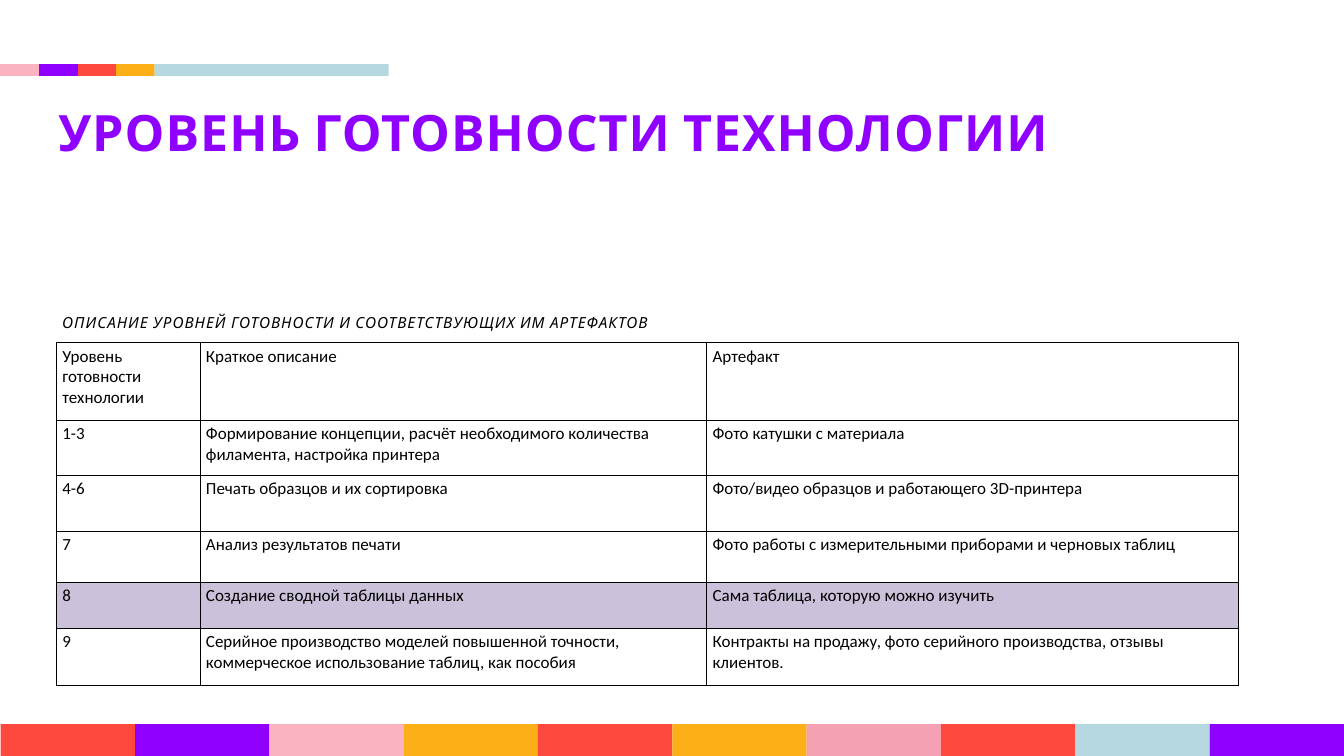
from dataclasses import dataclass

from lxml.etree import SubElement
from pptx import Presentation
from pptx.dml.color import RGBColor
from pptx.enum.shapes import MSO_SHAPE as Shape
from pptx.enum.text import MSO_ANCHOR as Anchor, MSO_AUTO_SIZE as AutoSize, PP_ALIGN as Align
from pptx.oxml.ns import qn
from pptx.util import Pt

PX = 9144  # EMU per px, 100 px to the inch
SLIDE_WIDTH, SLIDE_HEIGHT = 2199, 1237


@dataclass(frozen=True)
class Theme:
    pink: str = "FBB3C1"
    rose: str = "F4A1B3"
    violet: str = "8F00FF"
    red: str = "FD493D"
    amber: str = "FCAF17"
    blue: str = "B5D8E1"
    lilac: str = "CCC1DA"
    white: str = "FFFFFF"
    black: str = "000000"
    heading_font: str = "Cabin"
    table_font: str = "Calibri"
    title_size: int = 59
    caption_size: int = 18
    table_size: int = 20
    letter_spacing: int = 120  # hundredths of a point
    border_width: int = 1


THEME = Theme()

ACCENT_EDGES = [0, 64, 128, 190, 253, 636]
ACCENT_COLORS = [THEME.pink, THEME.violet, THEME.red, THEME.amber, THEME.blue]
FOOTER_COLORS = [THEME.red, THEME.violet, THEME.pink, THEME.amber, THEME.red,
                 THEME.amber, THEME.rose, THEME.red, THEME.blue, THEME.violet]

COLUMN_WIDTHS = [235, 829, 871]
ROW_HEIGHTS = [127, 90, 92, 83, 75, 94]
CURRENT_LEVEL = "8"
LEVELS = [
    ("Уровень готовности технологии", "Краткое описание", "Артефакт"),
    ("1-3", "Формирование концепции, расчёт необходимого количества филамента, настройка принтера",
     "Фото катушки с материала"),
    ("4-6", "Печать образцов и их сортировка", "Фото/видео образцов и работающего 3D-принтера"),
    ("7", "Анализ результатов печати", "Фото работы с измерительными приборами и черновых таблиц"),
    ("8", "Создание сводной таблицы данных", "Сама таблица, которую можно изучить"),
    ("9", "Серийное производство моделей повышенной точности, коммерческое использование таблиц, как пособия",
     "Контракты на продажу, фото серийного производства, отзывы клиентов."),
]


def px(*lengths):
    return [length * PX for length in lengths]


def set_attributes(target, values):
    for name, value in values.items():
        setattr(target, name, value)


def write_text(text_frame, text, color, spacing=None, **font_values):
    paragraph = text_frame.paragraphs[0]
    paragraph.alignment = Align.LEFT
    run = paragraph.add_run()
    run.text = text
    set_attributes(run.font, font_values)
    run.font.color.rgb = RGBColor.from_string(color)
    if spacing:
        run.font._element.set("spc", str(spacing))


def add_color_strip(slide, edges, colors, top, height):
    """Draw one filled block between each pair of neighbouring edges."""
    for left, right, color in zip(edges, edges[1:], colors):
        block = slide.shapes.add_shape(Shape.RECTANGLE, *px(left, top, right - left, height))
        block.shadow.inherit = False
        block.fill.solid()
        block.fill.fore_color.rgb = RGBColor.from_string(color)
        block.line.fill.background()


def add_title(slide, text):
    title = slide.shapes.title
    left, top, width, height = px(95, 164, 2054, 101)
    set_attributes(title, dict(left=left, top=top, width=width, height=height))
    set_attributes(title.text_frame, dict(
        margin_left=0, margin_top=2 * PX, margin_right=0, margin_bottom=0, word_wrap=True,
        vertical_anchor=Anchor.TOP, auto_size=AutoSize.SHAPE_TO_FIT_TEXT))
    write_text(title.text_frame, text, THEME.violet, THEME.letter_spacing,
               name=THEME.heading_font, size=Pt(THEME.title_size), bold=True)


def add_caption(slide, text):
    caption = slide.shapes.add_textbox(*px(92, 507, 1045, 40))
    set_attributes(caption.text_frame, dict(word_wrap=False, auto_size=AutoSize.SHAPE_TO_FIT_TEXT))
    write_text(caption.text_frame, text, THEME.black, THEME.letter_spacing,
               name=THEME.heading_font, size=Pt(THEME.caption_size), italic=True)


def add_cell_borders(cell):
    """Put the four border lines ahead of the cell fill, as the schema requires."""
    properties = cell._tc.get_or_add_tcPr()
    for index, side in enumerate(("a:lnL", "a:lnR", "a:lnT", "a:lnB")):
        line = SubElement(properties, qn(side), w=str(Pt(THEME.border_width)))
        SubElement(SubElement(line, qn("a:solidFill")), qn("a:srgbClr"), val=THEME.black)
        properties.insert(index, line)


def add_level_table(slide):
    frame = slide.shapes.add_table(len(LEVELS), len(COLUMN_WIDTHS),
                                   *px(92, 561, sum(COLUMN_WIDTHS), sum(ROW_HEIGHTS)))
    table = frame.table
    set_attributes(table, dict(first_row=False, horz_banding=False))
    for column, width in zip(table.columns, COLUMN_WIDTHS):
        column.width = width * PX
    for row, height, texts in zip(table.rows, ROW_HEIGHTS, LEVELS):
        row.height = height * PX
        fill = THEME.lilac if texts[0] == CURRENT_LEVEL else THEME.white
        for cell, text in zip(row.cells, texts):
            write_text(cell.text_frame, text, THEME.black,
                       name=THEME.table_font, size=Pt(THEME.table_size))
            cell.fill.solid()
            cell.fill.fore_color.rgb = RGBColor.from_string(fill)
            add_cell_borders(cell)


def main():
    presentation = Presentation()
    presentation.slide_width, presentation.slide_height = px(SLIDE_WIDTH, SLIDE_HEIGHT)
    slide = presentation.slides.add_slide(presentation.slide_layouts.get_by_name("Title Only"))

    tile_count = len(FOOTER_COLORS)
    footer_edges = [1 + round(index * (SLIDE_WIDTH - 1) / tile_count) for index in range(tile_count + 1)]
    add_color_strip(slide, ACCENT_EDGES, ACCENT_COLORS, 105, 19)
    add_color_strip(slide, footer_edges, FOOTER_COLORS, 1185, 52)
    add_title(slide, "УРОВЕНЬ ГОТОВНОСТИ ТЕХНОЛОГИИ")
    add_level_table(slide)
    add_caption(slide, "ОПИСАНИЕ УРОВНЕЙ ГОТОВНОСТИ И СООТВЕТСТВУЮЩИХ ИМ АРТЕФАКТОВ")
    presentation.save("out.pptx")


if __name__ == "__main__":
    main()
